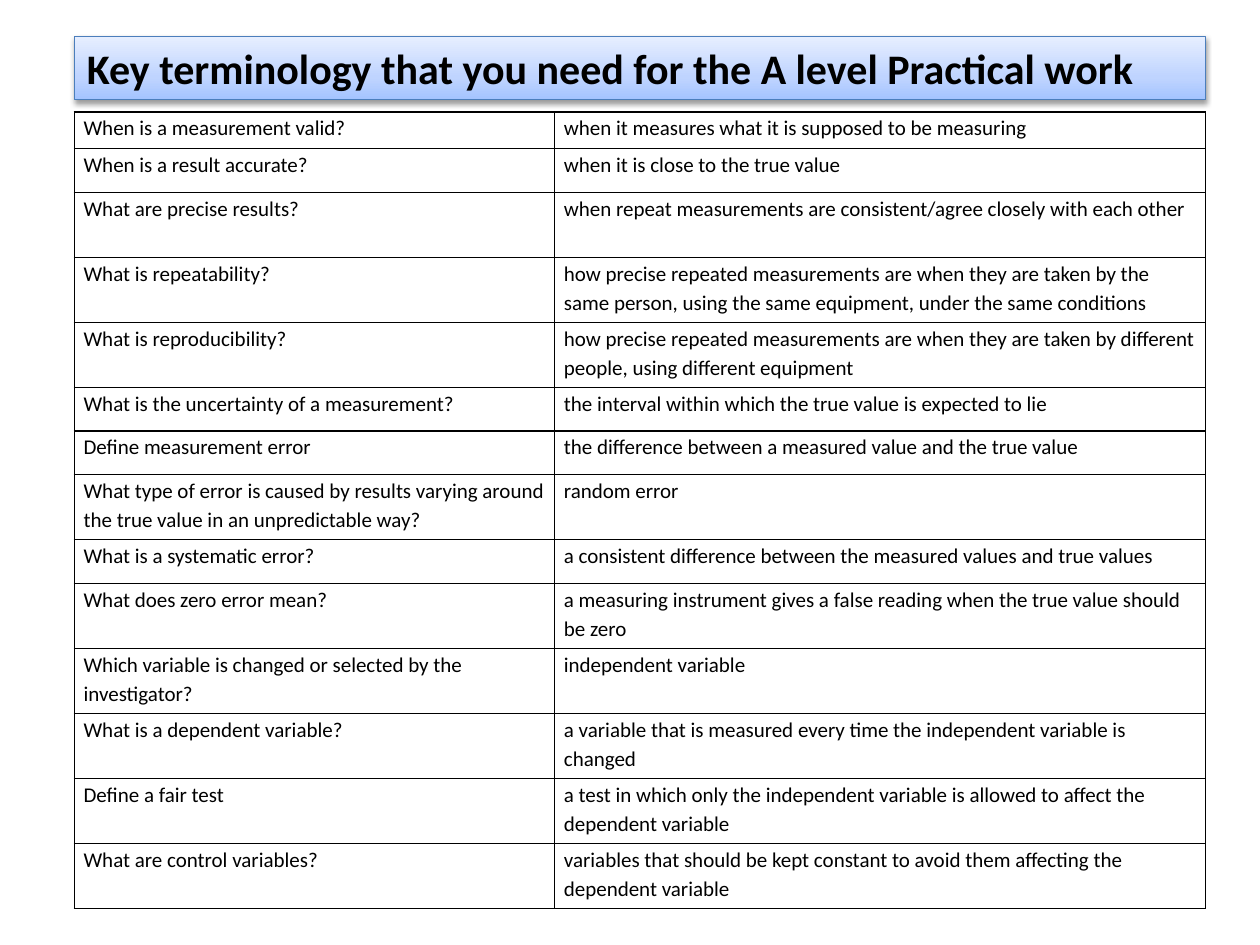
from typing import NamedTuple

from lxml import etree
from pptx import Presentation
from pptx.dml.color import RGBColor
from pptx.enum import text
from pptx.oxml import ns
from pptx.util import Pt

COLORS = {"text": "000000", "border": "000000", "title_line": "4B7EBC", "shadow": "000000"}
TITLE_STOPS = [(0, "A4C4FF"), (35, "BFD4FF"), (100, "E6EEFF")]
FONT = "Calibri"
LEFT, WIDTH = 42.5, 646.5
TITLE_TOP, TITLE_HEIGHT = 20.9, 36
TABLE_TOP = 64.1
COLUMN_WIDTHS = (274.5, 372)
FIRST, SHORT, TALL = 20.9, 24.9, 37.2  # row heights


class Entry(NamedTuple):
    question: str
    answer: str
    height: float


ENTRIES = [
    Entry("When is a measurement valid?", "when it measures what it is supposed to be measuring", FIRST),
    Entry("When is a result accurate?", "when it is close to the true value", SHORT),
    Entry("What are precise results?",
          "when repeat measurements are consistent/agree closely with each other", TALL),
    Entry("What is repeatability?",
          "how precise repeated measurements are when they are taken by the same person, "
          "using the same equipment, under the same conditions", TALL),
    Entry("What is reproducibility?",
          "how precise repeated measurements are when they are taken by different people, "
          "using different equipment", TALL),
    Entry("What is the uncertainty of a measurement?",
          "the interval within which the true value is expected to lie", SHORT),
    Entry("Define measurement error",
          "the difference between a measured value and the true value", SHORT),
    Entry("What type of error is caused by results varying around the true value "
          "in an unpredictable way?", "random error", TALL),
    Entry("What is a systematic error?",
          "a consistent difference between the measured values and true values", SHORT),
    Entry("What does zero error mean?",
          "a measuring instrument gives a false reading when the true value should be zero", TALL),
    Entry("Which variable is changed or selected by the investigator?",
          "independent variable", TALL),
    Entry("What is a dependent variable?",
          "a variable that is measured every time the independent variable is changed", TALL),
    Entry("Define a fair test",
          "a test in which only the independent variable is allowed to affect the "
          "dependent variable", TALL),
    Entry("What are control variables?",
          "variables that should be kept constant to avoid them affecting the "
          "dependent variable", TALL),
]


def add_xml(parent, tag: str, **attrs):
    """Append a DrawingML element and return it."""
    return etree.SubElement(parent, ns.qn(f"a:{tag}"), {k: str(v) for k, v in attrs.items()})


def style_paragraph(p, size: float, bold: bool = False) -> None:
    p.alignment = text.PP_ALIGN.LEFT
    p.font.name, p.font.size, p.font.bold = FONT, Pt(size), bold
    p.font.color.rgb = RGBColor.from_string(COLORS["text"])


def draw_title(sp, wording: str) -> None:
    sp.left, sp.top, sp.width, sp.height = map(Pt, (LEFT, TITLE_TOP, WIDTH, TITLE_HEIGHT))
    tf = sp.text_frame
    tf.text = wording
    tf.word_wrap = True
    tf.auto_size = text.MSO_AUTO_SIZE.NONE
    tf.vertical_anchor = text.MSO_ANCHOR.TOP
    style_paragraph(tf.paragraphs[0], 24, bold=True)

    # Three-stop gradient, running upwards
    sp.fill.gradient()
    sp.fill.gradient_angle = 90
    stops = sp._element.spPr.find(".//" + ns.qn("a:gsLst"))
    for stop in list(stops):
        stops.remove(stop)
    for position, color in TITLE_STOPS:
        add_xml(add_xml(stops, "gs", pos=position * 1000), "srgbClr", val=color)
    sp.line.color.rgb = RGBColor.from_string(COLORS["title_line"])
    sp.line.width = Pt(0.75)

    # Soft shadow below
    effects = add_xml(sp._element.spPr, "effectLst")
    shadow = add_xml(effects, "outerShdw", blurRad=Pt(3.1), dist=Pt(1.6),
                     dir=90 * 60000, rotWithShape=0)
    add_xml(add_xml(shadow, "srgbClr", val=COLORS["shadow"]), "alpha", val=38000)


def draw_cell(cell, wording: str) -> None:
    cell.text = wording
    cell.margin_left = cell.margin_right = Pt(5.3)
    cell.margin_top = cell.margin_bottom = Pt(0)
    cell.vertical_anchor = text.MSO_ANCHOR.TOP
    p = cell.text_frame.paragraphs[0]
    style_paragraph(p, 12)
    p.line_spacing = 1.15

    # Borders precede the fill in the cell properties
    tcPr = cell._tc.get_or_add_tcPr()
    for side in ("lnL", "lnR", "lnT", "lnB"):
        line = add_xml(tcPr, side, w=Pt(1))
        add_xml(add_xml(line, "solidFill"), "srgbClr", val=COLORS["border"])
    cell.fill.background()


def draw_table(s, entries: list[Entry]) -> None:
    height = sum(e.height for e in entries)
    table = s.shapes.add_table(len(entries), len(COLUMN_WIDTHS), Pt(LEFT), Pt(TABLE_TOP),
                               Pt(WIDTH), Pt(height)).table
    table.first_row = table.horz_banding = False
    for column, width in zip(table.columns, COLUMN_WIDTHS):
        column.width = Pt(width)
    for row, entry in zip(table.rows, entries):
        row.height = Pt(entry.height)
        for cell, wording in zip(row.cells, (entry.question, entry.answer)):
            draw_cell(cell, wording)


def main() -> None:
    prs = Presentation()
    prs.slide_width, prs.slide_height = Pt(720), Pt(540)
    s = prs.slides.add_slide(prs.slide_layouts[5])
    draw_title(s.shapes.title, "Key terminology that you need for the A level Practical work")
    draw_table(s, ENTRIES)
    prs.save("out.pptx")


if __name__ == "__main__":
    main()
